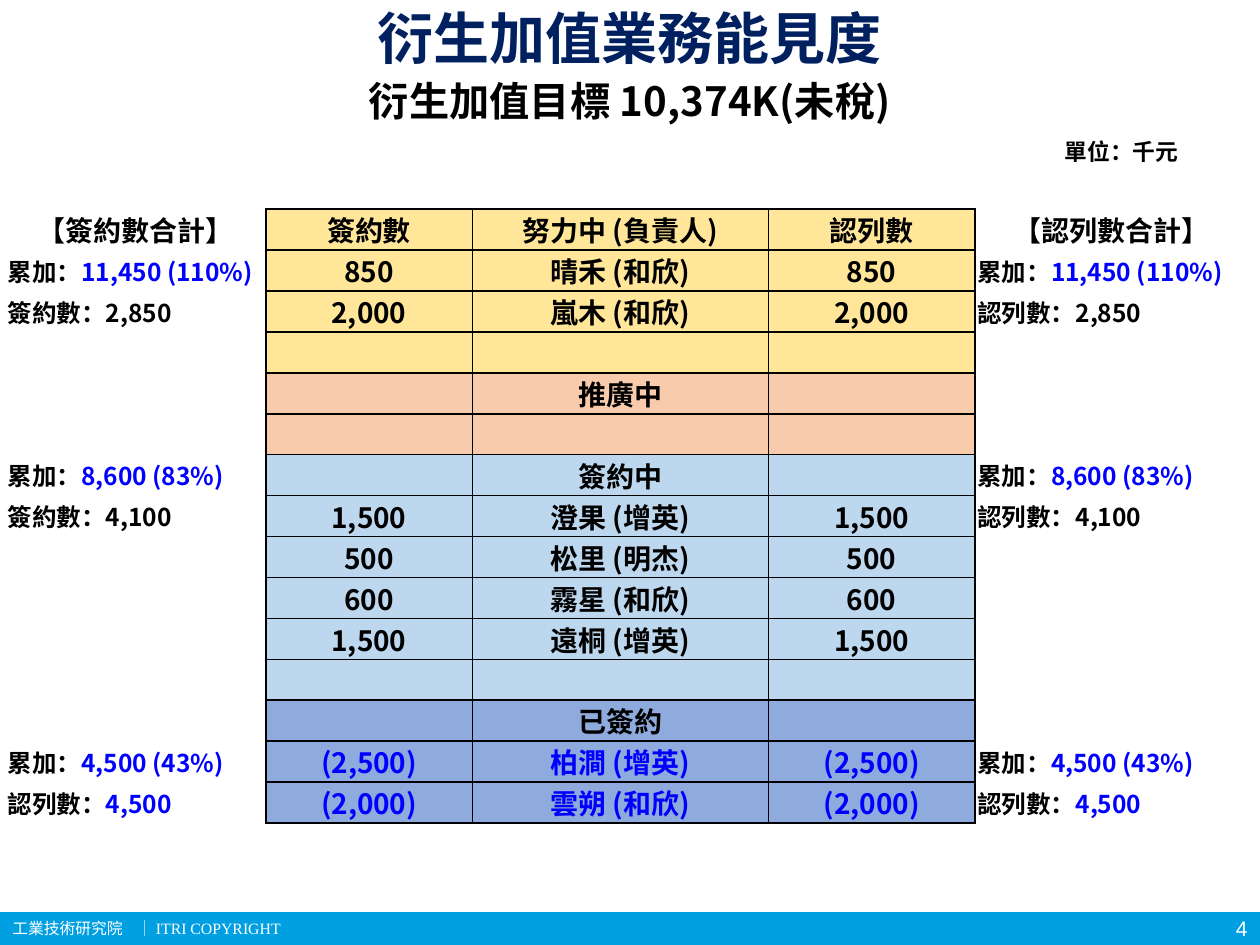
import pptx
import pptx.util
import pptx.dml.color
import pptx.enum.shapes
import pptx.enum.text
import pptx.oxml.ns
from lxml import etree

Pt = pptx.util.Pt
RGBColor = pptx.dml.color.RGBColor
ALIGN = pptx.enum.text.PP_ALIGN
MIDDLE = pptx.enum.text.MSO_ANCHOR.MIDDLE
qn = pptx.oxml.ns.qn

BLACK = RGBColor(0x00, 0x00, 0x00)
WHITE = RGBColor(0xFF, 0xFF, 0xFF)
NAVY = RGBColor(0x00, 0x20, 0x60)
BLUE = RGBColor(0x00, 0x00, 0xFF)
BAR_BLUE = RGBColor(0x00, 0x9F, 0xE2)
YELLOW = RGBColor(0xFF, 0xE6, 0x99)
PEACH = RGBColor(0xF8, 0xCB, 0xAD)
SKY = RGBColor(0xBD, 0xD7, 0xEE)
PERIWINKLE = RGBColor(0x8F, 0xAA, 0xDC)

SANS_TC = "Noto Sans CJK TC"
SANS_SC = "Noto Sans CJK SC"

COLUMN_WIDTHS = [149, 118, 169.2, 118, 156.2]
ROW_HEIGHT = 23.4

DEALS = [
    (YELLOW, "努力中 (負責人)", "簽約數", "認列數"),
    (YELLOW, "晴禾 (和欣)", "850", "850"),
    (YELLOW, "嵐木 (和欣)", "2,000", "2,000"),
    (YELLOW, "", "", ""),
    (PEACH, "推廣中", "", ""),
    (PEACH, "", "", ""),
    (SKY, "簽約中", "", ""),
    (SKY, "澄果 (增英)", "1,500", "1,500"),
    (SKY, "松里 (明杰)", "500", "500"),
    (SKY, "霧星 (和欣)", "600", "600"),
    (SKY, "遠桐 (增英)", "1,500", "1,500"),
    (SKY, "", "", ""),
    (PERIWINKLE, "已簽約", "", ""),
    (PERIWINKLE, "柏澗 (增英)", "(2,500)", "(2,500)"),
    (PERIWINKLE, "雲朔 (和欣)", "(2,000)", "(2,000)"),
]

SUMMARIES = {
    1: ("累加：", "累加：", "11,450 (110%)", BLUE),
    2: ("簽約數：", "認列數：", "2,850", BLACK),
    6: ("累加：", "累加：", "8,600 (83%)", BLUE),
    7: ("簽約數：", "認列數：", "4,100", BLACK),
    13: ("累加：", "累加：", "4,500 (43%)", BLUE),
    14: ("認列數：", "認列數：", "4,500", BLUE),
}


def write_text(frame, text, size=16, font=SANS_TC, color=BLACK, bold=True,
               align=ALIGN.CENTER, value="", value_color=BLACK):
    paragraph = frame.paragraphs[0]
    paragraph.alignment = align
    for part, part_color in ((text, color), (value, value_color)):
        if not part:
            continue
        run = paragraph.add_run()
        run.text = part
        run.font.size = Pt(size)
        run.font.bold = bold
        run.font.name = font
        run.font.color.rgb = part_color
        if font in (SANS_TC, SANS_SC):
            properties = run.font._element
            etree.SubElement(properties, qn("a:ea"), typeface=font)
    return paragraph


def add_label(slide, box, text, inset=0, **text_format):
    label = slide.shapes.add_textbox(*map(Pt, box))
    frame = label.text_frame
    frame.word_wrap = True
    frame.vertical_anchor = MIDDLE
    frame.margin_left = frame.margin_right = Pt(inset)
    frame.margin_top = frame.margin_bottom = 0
    return write_text(frame, text, **text_format)


def add_heading(slide, left, top, width):
    add_label(slide, (left, top, width, 42.5), "衍生加值業務能見度",
              size=32, font=SANS_SC, color=NAVY)
    add_label(slide, (left, top + 39.6, width, 35.3), "衍生加值目標 10,374K(未稅)", size=23)
    add_label(slide, (left + 564.5, top + 76.3, 85, 20.2), "單位：千元", size=13, font=SANS_SC)


def set_borders(cell, sides):
    properties = cell._tc.get_or_add_tcPr()
    for position, side in enumerate(("L", "R", "T", "B")):
        line = etree.Element(qn(f"a:ln{side}"), w=str(Pt(1)))
        if side in sides:
            fill = etree.SubElement(line, qn("a:solidFill"))
            etree.SubElement(fill, qn("a:srgbClr"), val=str(BLACK))
        else:
            etree.SubElement(line, qn("a:noFill"))
        properties.insert(position, line)


def format_cell(cell, fill, sides):
    cell.fill.solid()
    cell.fill.fore_color.rgb = fill
    cell.vertical_anchor = MIDDLE
    cell.margin_left = cell.margin_right = Pt(1.44)
    cell.margin_top = cell.margin_bottom = 0
    set_borders(cell, sides)


def add_forecast(slide, left, top):
    frame = slide.shapes.add_table(
        len(DEALS), len(COLUMN_WIDTHS), Pt(left), Pt(top),
        Pt(sum(COLUMN_WIDTHS)), Pt(ROW_HEIGHT * len(DEALS)))
    table = frame.table
    table.first_row = table.horz_banding = False
    for column, width in zip(table.columns, COLUMN_WIDTHS):
        column.width = Pt(width)
    for index, (row, deal) in enumerate(zip(table.rows, DEALS)):
        row.height = Pt(ROW_HEIGHT)
        fill, client, signed, recognized = deal
        signed_total, *deal_cells, recognized_total = row.cells
        format_cell(signed_total, WHITE, "R")
        format_cell(recognized_total, WHITE, "L")
        is_signed = fill == PERIWINKLE and signed
        for cell, text in zip(deal_cells, (signed, client, recognized)):
            format_cell(cell, fill, "LRTB")
            write_text(cell.text_frame, text, color=BLUE if is_signed else BLACK)
        if index in SUMMARIES:
            *labels, value, value_color = SUMMARIES[index]
            for cell, label in zip((signed_total, recognized_total), labels):
                write_text(cell.text_frame, label, size=14, align=ALIGN.LEFT,
                           value=value, value_color=value_color)
    write_text(table.cell(0, 0).text_frame, "【簽約數合計】")
    write_text(table.cell(0, 4).text_frame, "【認列數合計】")


def add_footer(slide, left, top, width, height):
    bar = slide.shapes.add_shape(pptx.enum.shapes.MSO_SHAPE.RECTANGLE,
                                 Pt(left), Pt(top), Pt(width), Pt(height))
    bar.shadow.inherit = False
    bar.fill.solid()
    bar.fill.fore_color.rgb = BAR_BLUE
    bar.line.fill.background()
    add_label(slide, (left + width - 42, top, 42, height), "4", inset=7.2, size=12,
              font="Arial", color=WHITE, bold=False, align=ALIGN.RIGHT)
    copyright_line = add_label(
        slide, (left, top, 643.7, height), "工業技術研究院\t│ ITRI COPYRIGHT", inset=7.2,
        size=9, font="Times New Roman", color=WHITE, bold=False, align=ALIGN.LEFT)
    tabs = etree.SubElement(copyright_line._p.get_or_add_pPr(), qn("a:tabLst"))
    etree.SubElement(tabs, qn("a:tab"), pos=str(Pt(71)), algn="l")


def main():
    deck = pptx.Presentation()
    deck.slide_width = Pt(720)
    deck.slide_height = Pt(540)
    slide = deck.slides.add_slide(deck.slide_layouts[6])
    add_footer(slide, 0, 521.3, 720, 18.7)
    add_heading(slide, 33.8, 0, 652.3)
    add_forecast(slide, 2.9, 119.5)
    deck.save("out.pptx")


if __name__ == "__main__":
    main()
